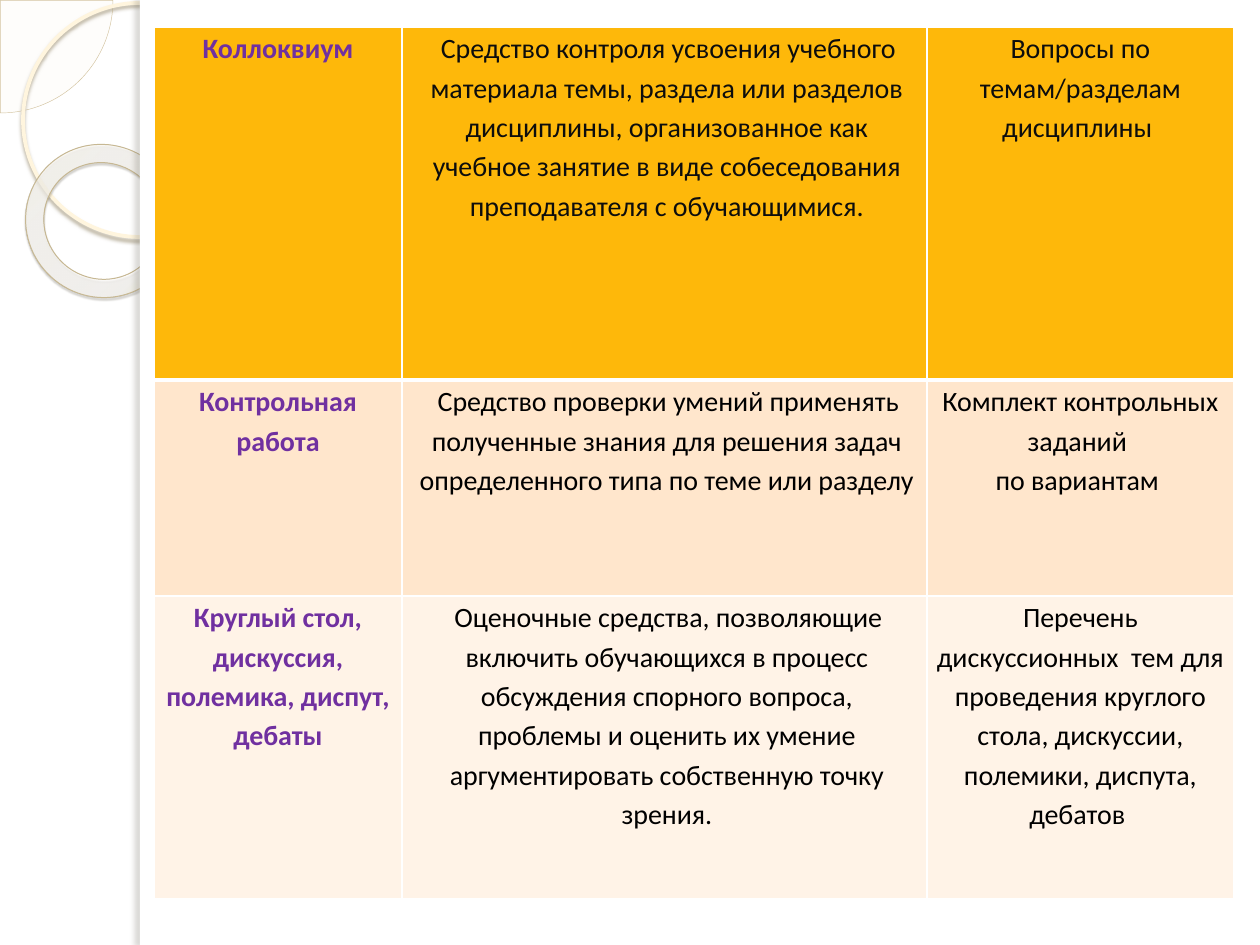
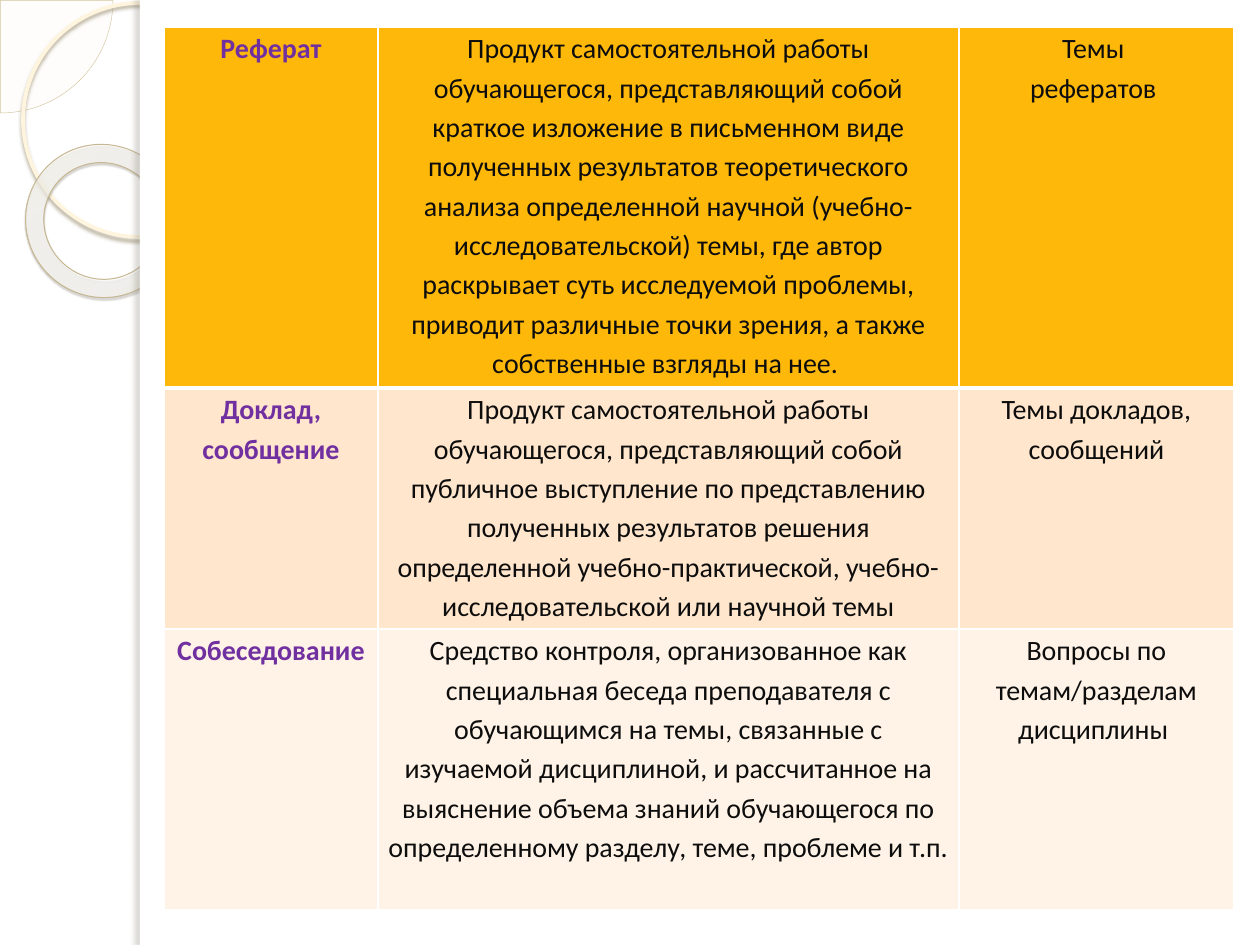
import pptx
import pptx.util
import pptx.dml.color
import pptx.enum.shapes
import pptx.enum.text
import pptx.oxml
import pptx.oxml.ns

RGB = pptx.dml.color.RGBColor
KIND = pptx.enum.shapes.MSO_SHAPE
PT = pptx.util.Pt
QN = pptx.oxml.ns.qn
NS = pptx.oxml.ns.nsdecls("a")

WHITE = RGB(0xFF, 0xFF, 0xFF)
BLACK = RGB(0x00, 0x00, 0x00)
INK = RGB(0x0D, 0x0D, 0x0D)
PURPLE = RGB(0x70, 0x30, 0xA0)
AMBER = RGB(0xFE, 0xB8, 0x0A)
PEACH = RGB(0xFF, 0xE6, 0xCC)
CREAM = RGB(0xFF, 0xF3, 0xE7)
IVORY = RGB(0xFE, 0xFA, 0xF4)
SAND = RGB(0xD3, 0xC3, 0x9F)
BUTTER = RGB(0xFF, 0xF5, 0xDE)
KHAKI = RGB(0xC7, 0xB8, 0x93)
TAUPE = RGB(0xB0, 0xA6, 0x8F)
UMBER = RGB(0x5A, 0x54, 0x44)
GREY = RGB(0x73, 0x6F, 0x63)
GLOW = [(0, RGB(0xFF, 0xFC, 0xF6), 70), (70, RGB(0xFF, 0xFE, 0xFB), 55),
        (100, RGB(0xF0, 0xD2, 0x8E), 60)]

FONT = "Calibri"
WIDE, HIGH = 1260, 945
SIDE = 140
TOP, RIGHT = 27, 1234
PAD = 9
ROWS = [AMBER, PEACH, CREAM]

ORAL = [
    [["Коллоквиум"],
     ["Средство контроля усвоения учебного материала темы, раздела или "
      "разделов дисциплины, организованное как учебное занятие в виде "
      "собеседования преподавателя с обучающимися."],
     ["Вопросы по темам/разделам дисциплины "]],
    [["Контрольная работа"],
     ["Средство проверки умений применять полученные знания для решения "
      "задач определенного типа по теме или разделу"],
     ["Комплект контрольных заданий ", "по вариантам "]],
    [["Круглый стол, дискуссия, полемика, диспут, дебаты"],
     ["Оценочные средства, позволяющие включить обучающихся в процесс "
      "обсуждения спорного вопроса, проблемы и оценить их умение "
      "аргументировать собственную точку зрения."],
     ["Перечень дискуссионных  тем для проведения круглого стола, "
      "дискуссии, полемики, диспута, дебатов "]],
]
PAPERS = [
    [["Реферат"],
     ["Продукт самостоятельной работы обучающегося, представляющий собой "
      "краткое изложение в письменном виде полученных результатов "
      "теоретического анализа определенной научной "
      "(учебно-исследовательской) темы, где автор раскрывает суть "
      "исследуемой проблемы, приводит различные точки зрения, а также "
      "собственные взгляды на нее. "],
     ["Темы ", "рефератов "]],
    [["Доклад, сообщение"],
     ["Продукт самостоятельной работы обучающегося, представляющий собой "
      "публичное выступление по представлению полученных результатов "
      "решения определенной учебно-практической, учебно-исследовательской "
      "или научной темы"],
     ["Темы докладов, сообщений"]],
    [["Собеседование"],
     ["Средство контроля, организованное как специальная беседа "
      "преподавателя с обучающимся на темы, связанные с изучаемой "
      "дисциплиной, и рассчитанное на выяснение объема знаний "
      "обучающегося по определенному разделу, теме, проблеме и т.п."],
     ["Вопросы по темам/разделам дисциплины "]],
]


def px(n):
    return pptx.util.Emu(round(n * 914400 / 126))


def paint(color, alpha=100):
    """Colour XML with an opacity in percent."""
    return (f'<a:srgbClr {NS} val="{color}">'
            f'<a:alpha val="{alpha * 1000}"/></a:srgbClr>')


def add_part(slide, kind, box, fill=None, line=None, width=0):
    part = slide.shapes.add_shape(kind, *map(px, box))
    part.shadow.inherit = False
    if fill is None:
        part.fill.background()
    else:
        part.fill.solid()
        part.fill.fore_color.rgb = fill
    if line is None:
        part.line.fill.background()
    else:
        part.line.color.rgb = line
        part.line.width = PT(width)
    return part


def cast(part, color, alpha, blur, dist, angle):
    """Give a part an outer shadow."""
    effects = part.element.spPr.find(QN("a:effectLst"))
    effects.append(pptx.oxml.parse_xml(
        f'<a:outerShdw {NS} blurRad="{PT(blur)}" dist="{PT(dist)}" '
        f'dir="{angle * 60000}" algn="tl" rotWithShape="0">'
        f'{paint(color, alpha)}</a:outerShdw>'))


def glow(part):
    """Swap the solid fill for a round gradient."""
    stops = "".join(f'<a:gs pos="{at * 1000}">{paint(color, alpha)}</a:gs>'
                    for at, color, alpha in GLOW)
    solid = part.element.spPr.find(QN("a:solidFill"))
    solid.getparent().replace(solid, pptx.oxml.parse_xml(
        f'<a:gradFill {NS} rotWithShape="1"><a:gsLst>{stops}</a:gsLst>'
        '<a:path path="circle"><a:fillToRect l="-408000" t="-50000" '
        'r="508000" b="150000"/></a:path></a:gradFill>'))


def add_rings(slide):
    pie = add_part(slide, KIND.PIE, (-112, -112, 225, 225), IVORY, SAND, 0.25)
    pie.adjustments[0] = 0
    pie.adjustments[1] = 54.02
    tint = pie.element.spPr.find(QN("a:solidFill"))
    tint.replace(tint[0], pptx.oxml.parse_xml(paint(IVORY, 33)))

    hoop = add_part(slide, KIND.OVAL, (23, 3, 234, 234), None, BUTTER, 2.15)
    cast(hoop, TAUPE, 85, 2, 2, 90)

    ring = add_part(slide, KIND.DONUT, (25, 145, 155, 152), IVORY, KHAKI, 0.58)
    ring.adjustments[0] = 0.12
    ring.rotation = 38.6
    glow(ring)
    cast(ring, UMBER, 35, 1, 1.2, 75)
    return [pie, hoop, ring]


def add_panel(slide):
    page = add_part(slide, KIND.RECTANGLE, (SIDE, 0, WIDE - SIDE, HIGH), WHITE)
    edge = add_part(slide, KIND.RECTANGLE, (SIDE, 0, 10, HIGH), WHITE)
    cast(edge, GREY, 25, 3, 3, 180)
    return [page, edge]


def dress(layout, slide):
    """Move the shared decor from a slide to its layout."""
    for holder in list(layout.placeholders):
        holder.element.getparent().remove(holder.element)
    for part in add_rings(slide) + add_panel(slide):
        layout.shapes.element.append(part.element)


def rule(cell, row):
    """Draw white borders, thick below the first row."""
    sizes = {"L": 1, "R": 1, "T": 3 if row == 1 else 1,
             "B": 3 if row == 0 else 1}
    props = cell._tc.get_or_add_tcPr()
    for side, size in sizes.items():
        props.append(pptx.oxml.parse_xml(
            f'<a:ln{side} {NS} w="{PT(size)}"><a:solidFill>{paint(WHITE)}'
            f'</a:solidFill></a:ln{side}>'))


def write(cell, lines, color, bold, dent):
    frame = cell.text_frame
    for i, line in enumerate(lines):
        para = frame.add_paragraph() if i else frame.paragraphs[0]
        para.alignment = pptx.enum.text.PP_ALIGN.CENTER
        para.line_spacing = 1.15
        if dent:
            props = para._p.get_or_add_pPr()
            props.set("marL", str(px(5)))
            props.set("indent", str(px(3)))
        run = para.add_run()
        run.text = line
        run.font.name = FONT
        run.font.size = PT(16)
        run.font.bold = bold
        run.font.color.rgb = color


def add_grid(slide, data, cols, rows, inks, dent=False):
    """Table of methods whose right edge is fixed."""
    box = (RIGHT - sum(cols), TOP, sum(cols), sum(rows))
    grid = slide.shapes.add_table(len(rows), len(cols), *map(px, box)).table
    grid.horz_banding = False
    for col, width in zip(grid.columns, cols):
        col.width = px(width)
    for r, height in enumerate(rows):
        grid.rows[r].height = px(height)
        for c, lines in enumerate(data[r]):
            cell = grid.cell(r, c)
            cell.margin_left = cell.margin_right = px(PAD)
            cell.margin_top = cell.margin_bottom = 0
            rule(cell, r)
            cell.fill.solid()
            cell.fill.fore_color.rgb = ROWS[r]
            write(cell, lines, inks[r] if c else PURPLE, c == 0,
                  dent and c == 1)


def main():
    deck = pptx.Presentation()
    deck.slide_width, deck.slide_height = px(WIDE), px(HIGH)
    layout = deck.slide_layouts[6]
    first, second = [deck.slides.add_slide(layout) for _ in range(2)]
    dress(layout, first)
    add_grid(first, ORAL, [248, 525, 307], [353, 216, 303],
             [INK, BLACK, BLACK], dent=True)
    add_grid(second, PAPERS, [214, 581, 275], [361, 241, 281], [INK] * 3)
    deck.save("out.pptx")


if __name__ == "__main__":
    main()
